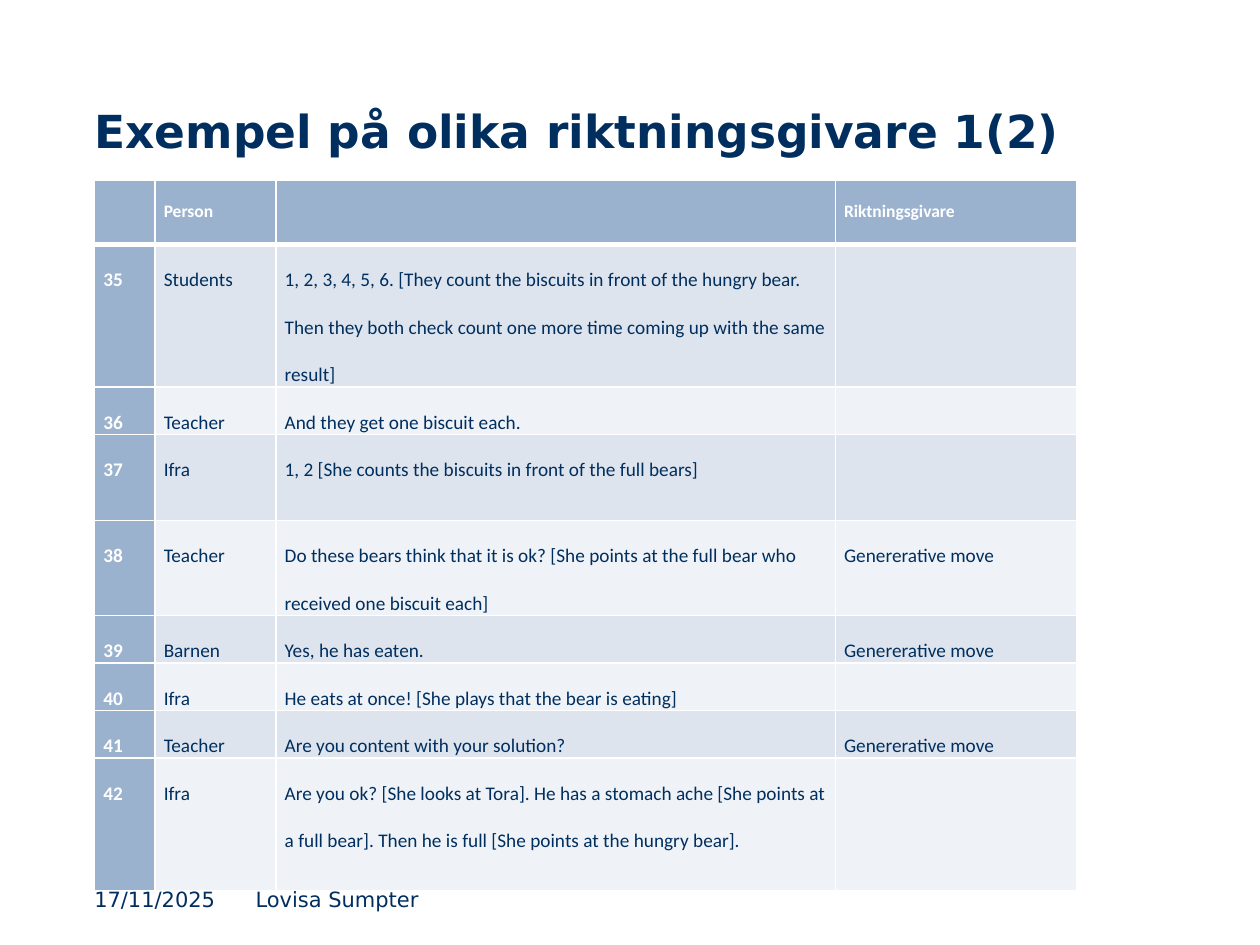
"""Build a slide with a table of classroom dialogue and its direction givers."""
from lxml.etree import SubElement
from pptx import Presentation
from pptx.dml.color import RGBColor
from pptx.enum.text import MSO_ANCHOR as ANCHOR
from pptx.oxml.ns import qn
from pptx.util import Inches, Pt

COLORS = {"navy": "002F5F", "head": "9BB2CE", "odd": "DEE4ED", "even": "EFF2F6", "white": "FFFFFF"}
MOVE = "Genererative move"
ROWS = [
    ("", "Person", "", "Riktningsgivare"),
    ("35", "Students", "1, 2, 3, 4, 5, 6. [They count the biscuits in front of the hungry bear. "
     "Then they both check count one more time coming up with the same result]", ""),
    ("36", "Teacher", "And they get one biscuit each.", ""),
    ("37", "Ifra", "1, 2 [She counts the biscuits in front of the full bears]", ""),
    ("38", "Teacher", "Do these bears think that it is ok? [She points at the full bear who "
     "received one biscuit each]", MOVE),
    ("39", "Barnen", "Yes, he has eaten.", MOVE),
    ("40", "Ifra", "He eats at once! [She plays that the bear is eating]", ""),
    ("41", "Teacher", "Are you content with your solution?", MOVE),
    ("42", "Ifra", "Are you ok? [She looks at Tora]. He has a stomach ache [She points at a full bear]. "
     "Then he is full [She points at the hungry bear].", ""),
]
COL_WIDTHS = [0.48, 0.96, 4.44, 1.92]
ROW_HEIGHTS = [0.51, 1.05, 0.31, 0.68, 0.68, 0.31, 0.31, 0.31, 1.05]


def style(p, size, color, name, bold=False):
    for r in p.runs:
        r.font.size, r.font.name, r.font.bold = Pt(size), name, bold
        r.font.color.rgb = RGBColor.from_string(COLORS[color])


def add_border(cell, side, width):
    ln = SubElement(cell._tc.get_or_add_tcPr(), qn(f"a:ln{side}"), w=str(Pt(width)))
    SubElement(SubElement(ln, qn("a:solidFill")), qn("a:srgbClr"), val=COLORS["white"])


prs = Presentation()
prs.slide_width, prs.slide_height = Inches(10), Inches(7.5)
s = prs.slides.add_slide(prs.slide_layouts[5])

title = s.shapes.title
title.left, title.top, title.width, title.height = [Inches(v) for v in (0.65, 0.43, 8.69, 0.87)]
tf = title.text_frame
tf.text = "Exempel på olika riktningsgivare 1(2)"
tf.vertical_anchor = ANCHOR.BOTTOM
tf.paragraphs[0].alignment = 1
style(tf.paragraphs[0], 26, "navy", "DejaVu Sans", True)

table = s.shapes.add_table(len(ROWS), len(COL_WIDTHS), Inches(0.75), Inches(1.43),
                           Inches(sum(COL_WIDTHS)), Inches(sum(ROW_HEIGHTS))).table
for col, width in zip(table.columns, COL_WIDTHS):
    col.width = Inches(width)
for row, height in zip(table.rows, ROW_HEIGHTS):
    row.height = Inches(height)

for i, texts in enumerate(ROWS):
    for j, text in enumerate(texts):
        cell = table.cell(i, j)
        is_head = i == 0 or j == 0
        cell.margin_left = cell.margin_right = Inches(0.07)
        cell.margin_top = cell.margin_bottom = 0
        for side in "LRTB":
            add_border(cell, side, 3 if (i, side) in ((0, "B"), (1, "T")) else 1)
        cell.fill.solid()
        fill = "head" if is_head else "odd" if i % 2 else "even"
        cell.fill.fore_color.rgb = RGBColor.from_string(COLORS[fill])
        if text:
            cell.text_frame.text = text
            p = cell.text_frame.paragraphs[0]
            p.line_spacing, p.space_after = 2.0, Pt(8)
            style(p, 11 if i else 10, "white" if is_head else "navy", "Calibri", is_head)

for text, left, width in (("17/11/2025", 0.65, 1.23), ("Lovisa Sumpter", 1.93, 4.91)):
    tf = s.shapes.add_textbox(Inches(left), Inches(6.98), Inches(width), Inches(0.31)).text_frame
    tf.word_wrap = True
    tf.vertical_anchor = ANCHOR.MIDDLE
    tf.text = text
    style(tf.paragraphs[0], 12, "navy", "DejaVu Sans")

prs.save("out.pptx")
